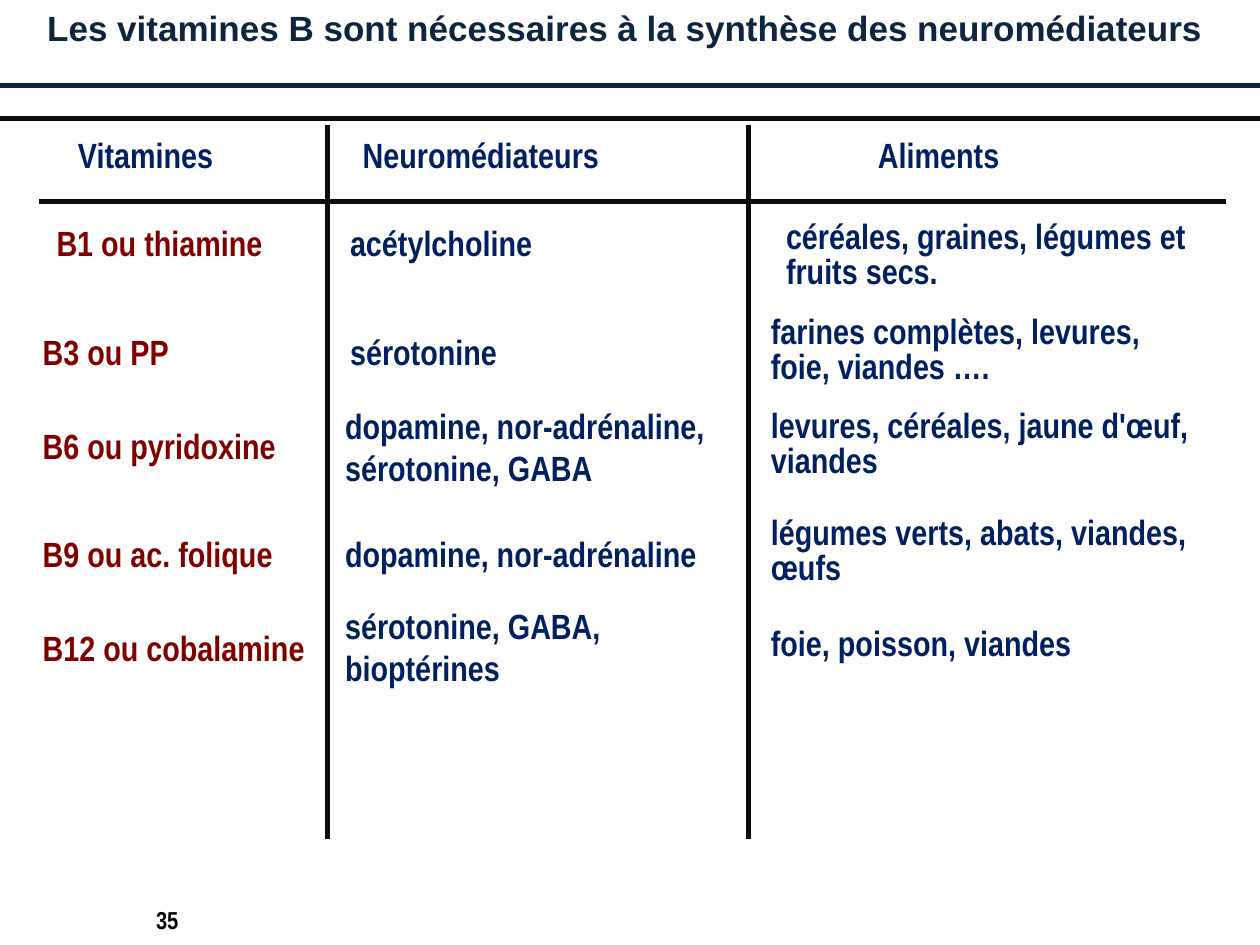
"""Build a slide on B vitamins, their neurotransmitters and food sources."""
from dataclasses import dataclass
from typing import Optional

from lxml.etree import SubElement
from pptx import Presentation
from pptx.dml.color import RGBColor
from pptx.enum.shapes import MSO_CONNECTOR as CONN
from pptx.enum.text import MSO_ANCHOR as ANCHOR, MSO_AUTO_SIZE as AUTO, PP_ALIGN as ALIGN
from pptx.oxml.ns import qn
from pptx.util import Inches, Pt

COLORS = {"title": "0F243E", "rule": "0D0A10", "text": "002060", "vitamin": "800000", "number": "000000"}
NARROW = "Arial Narrow"


@dataclass
class Label:
    text: str
    x: float
    y: float
    w: float
    h: float = 0.44
    color: str = "text"
    wrap: bool = True
    spacing: Optional[float] = None
    size: float = 20


@dataclass
class Rule:
    x1: float
    y1: float
    x2: float
    y2: float
    color: str = "rule"


def add_run(p, text: str, font: str, size: float, color: str) -> None:
    r = p.add_run()
    r.text = text
    r.font.name, r.font.size, r.font.bold = font, Pt(size), True
    r.font.color.rgb = RGBColor.from_string(COLORS[color])


def add_label(slide, label: Label) -> None:
    sp = slide.shapes.add_textbox(*map(Inches, (label.x, label.y, label.w, label.h)))
    tf = sp.text_frame
    tf.word_wrap = label.wrap
    tf.auto_size = AUTO.SHAPE_TO_FIT_TEXT
    p = tf.paragraphs[0]
    if label.spacing:
        p.line_spacing = Pt(label.spacing)
    add_run(p, label.text, NARROW, label.size, label.color)


def add_rule(slide, rule: Rule) -> None:
    line = slide.shapes.add_connector(CONN.STRAIGHT, *map(Inches, (rule.x1, rule.y1, rule.x2, rule.y2)))
    line.line.width = Pt(3)
    line.line.color.rgb = RGBColor.from_string(COLORS[rule.color])
    SubElement(line._element.spPr, qn("a:effectLst"))


def vitamin(text: str, y: float, w: float, x: float = 0.24) -> Label:
    return Label(text, x, y, w, color="vitamin", wrap=False)


def food(text: str, y: float, h: float = 0.66, x: float = 6.02) -> Label:
    return Label(text, x, y, 3.54, h, spacing=20)


def add_title(slide, text: str) -> None:
    sp = slide.shapes.title
    sp.left, sp.top, sp.width, sp.height = map(Inches, (0, 0, 10, 0.68))
    tf = sp.text_frame
    tf.word_wrap, tf.auto_size, tf.vertical_anchor = True, AUTO.NONE, ANCHOR.TOP
    p = tf.paragraphs[0]
    p.alignment = ALIGN.CENTER
    add_run(p, text, "Arial", 20, "title")


RULES = [
    Rule(0, 0.68, 10, 0.68, "title"),
    Rule(0, 0.94, 10, 0.94),
    Rule(0.31, 1.6, 9.73, 1.6),
    *(Rule(x, 0.99, x, 6.66) for x in (2.6, 5.94)),
]

LABELS = [
    Label("Vitamines", 0.52, 1.01, 1.28, wrap=False),
    Label("Neuromédiateurs", 2.78, 1.01, 3.19),
    Label("Aliments", 6.87, 1.01, 1.17, wrap=False),
    vitamin("B1 ou thiamine", 1.71, 1.85, x=0.35),
    Label("acétylcholine", 2.68, 1.71, 1.66, wrap=False),
    food("céréales, graines, légumes et fruits secs.", 1.71, x=6.14),
    vitamin("B3 ou PP", 2.57, 1.21),
    Label("sérotonine", 2.68, 2.57, 1.38, wrap=False),
    food("farines complètes, levures, foie, viandes ….", 2.46),
    vitamin("B6 ou pyridoxine", 3.32, 2.06),
    Label("dopamine, nor-adrénaline, sérotonine, GABA", 2.64, 3.16, 3.19, 0.77),
    food("levures, céréales, jaune d'œuf, viandes", 3.21),
    vitamin("B9 ou ac. folique", 4.18, 2.04),
    Label("dopamine, nor-adrénaline", 2.64, 4.18, 3.19),
    food("légumes verts, abats, viandes, œufs", 4.06),
    vitamin("B12 ou cobalamine", 4.92, 2.3),
    Label("sérotonine, GABA, bioptérines", 2.64, 4.75, 3.19, 0.77),
    food("foie, poisson, viandes", 4.94, 0.38),
    Label("35", 1.14, 7.13, 0.63, 0.34, "number", size=14),
]


def main() -> None:
    prs = Presentation()
    prs.slide_width, prs.slide_height = Inches(10), Inches(7.5)
    slide = prs.slides.add_slide(prs.slide_layouts[5])
    add_title(slide, "Les vitamines B sont nécessaires à la synthèse des neuromédiateurs ")
    for rule in RULES:
        add_rule(slide, rule)
    for label in LABELS:
        add_label(slide, label)
    prs.save("out.pptx")


if __name__ == "__main__":
    main()
